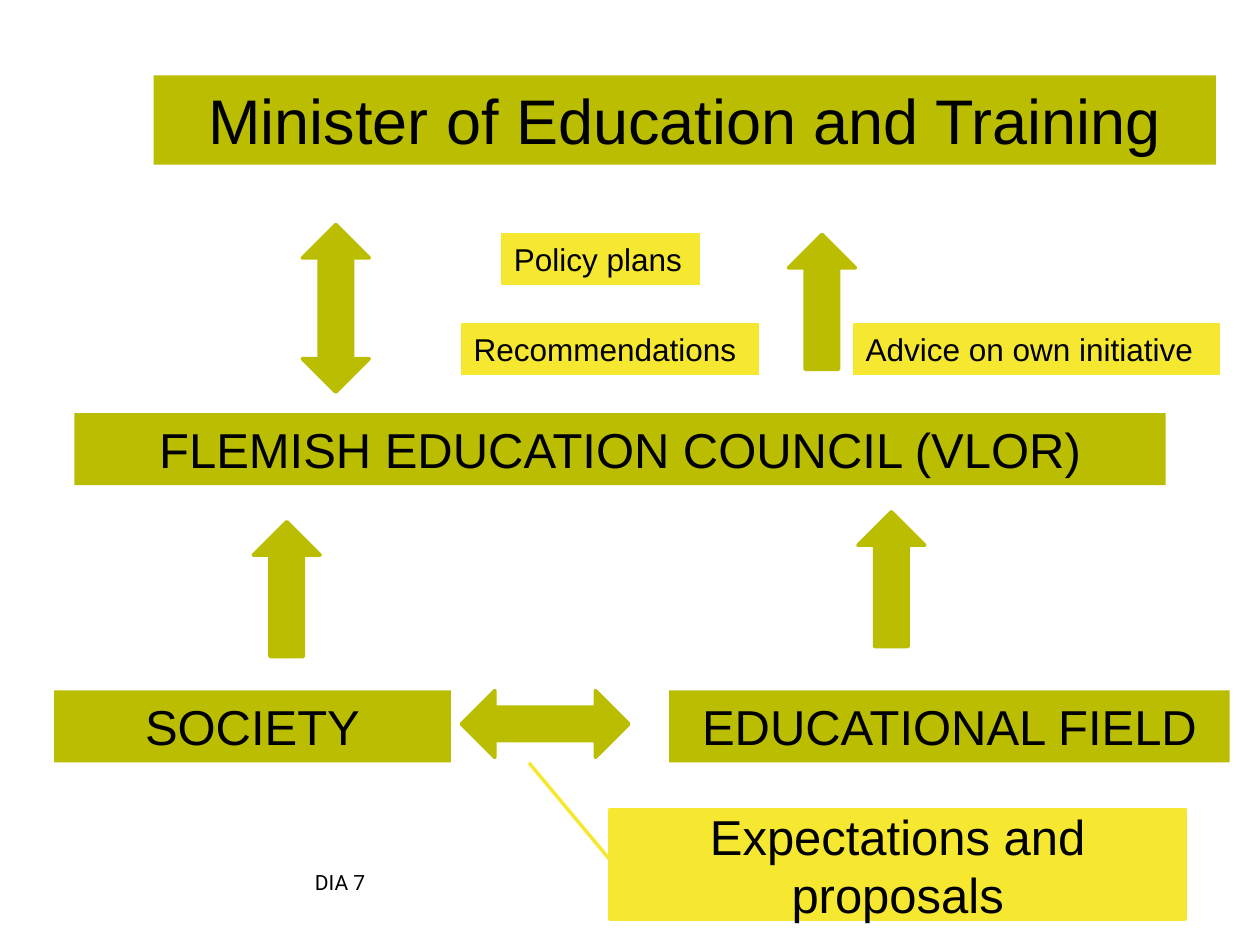
from pptx import Presentation
from pptx.dml.color import RGBColor
from pptx.enum.shapes import MSO_SHAPE
from pptx.enum.text import MSO_ANCHOR, MSO_AUTO_SIZE, PP_ALIGN
from pptx.util import Cm, Pt

RECT = MSO_SHAPE.RECTANGLE
CALLOUT = MSO_SHAPE.LINE_CALLOUT_1
UP = MSO_SHAPE.RIGHT_ARROW
BOTH = MSO_SHAPE.LEFT_RIGHT_ARROW
LEFT, CENTER = PP_ALIGN.LEFT, PP_ALIGN.CENTER
TOP, MIDDLE = MSO_ANCHOR.TOP, MSO_ANCHOR.MIDDLE
FIT = MSO_AUTO_SIZE.SHAPE_TO_FIT_TEXT

COLORS = {"olive": "BBBE00", "yellow": "F6E830", "text": "000000"}


def rgb(name):
    return RGBColor.from_string(COLORS[name])


def add_text(sp, text, size, align=LEFT, anchor=TOP, font="Arial"):
    tf = sp.text_frame
    tf.word_wrap = True
    tf.vertical_anchor = anchor
    p = tf.paragraphs[0]
    p.alignment = align
    r = p.add_run()
    r.text = text
    r.font.size = Pt(size)
    r.font.name = font
    r.font.color.rgb = rgb("text")
    return tf


def add_filled(s, kind, x, y, w, h, color, line=0):
    sp = s.shapes.add_shape(kind, Cm(x), Cm(y), Cm(w), Cm(h))
    sp.shadow.inherit = False
    sp.fill.solid()
    sp.fill.fore_color.rgb = rgb(color)
    if line:
        sp.line.color.rgb = rgb(color)
        sp.line.width = Pt(line)
    else:
        sp.line.fill.background()
    return sp


def add_actor(s, text, x, y, w, h=1.45, size=28):
    sp = add_filled(s, RECT, x, y, w, h, "olive")
    add_text(sp, text, size, CENTER).auto_size = FIT


def add_label(s, text, x, y, w):
    sp = add_filled(s, RECT, x, y, w, 1.02, "yellow", 0.75)
    add_text(sp, text, 18).auto_size = FIT


def add_arrow(s, kind, x, y, w, rotation=270):
    sp = add_filled(s, kind, x, y, w, 1.35, "olive", 2)
    sp.rotation = rotation


def add_callout(s, text, x, y, w, h, adjustments):
    sp = add_filled(s, CALLOUT, x, y, w, h, "yellow", 2)
    for i, value in enumerate(adjustments):
        sp.adjustments[i] = value
    add_text(sp, text, 28, CENTER, MIDDLE)


def main():
    prs = Presentation()
    prs.slide_width, prs.slide_height = Cm(25.4), Cm(19.05)
    s = prs.slides.add_slide(prs.slide_layouts[6])

    number = s.shapes.add_textbox(Cm(6.1), Cm(17.4), Cm(2.2), Cm(1.32))
    add_text(number, "DIA 7", 12, font="Roboto")

    add_actor(s, "Minister of Education and Training", 3.1, 1.52, 21.41, 1.8, 36)
    add_actor(s, "FLEMISH EDUCATION COUNCIL (VLOR)", 1.5, 8.33, 22)
    add_actor(s, "EDUCATIONAL FIELD", 13.49, 13.92, 11.3)
    add_actor(s, "SOCIETY", 1.09, 13.92, 8)

    add_arrow(s, BOTH, 9.3, 13.92, 3.38, 0)
    add_callout(s, "Expectations and proposals", 12.29, 16.33, 11.61, 2.21,
                (-0.43, -0.14, 0.45, 0))

    for x, y in ((4.42, 11.2), (15.21, 5.41), (16.61, 11)):
        add_arrow(s, UP, x, y, 2.72)
    add_arrow(s, BOTH, 5.08, 5.54, 3.38)

    add_label(s, "Policy plans", 10.11, 4.72, 3.99)
    add_label(s, "Recommendations", 9.3, 6.53, 5.99)
    add_label(s, "Advice on own initiative", 17.2, 6.53, 7.39)

    prs.save("out.pptx")


if __name__ == "__main__":
    main()
